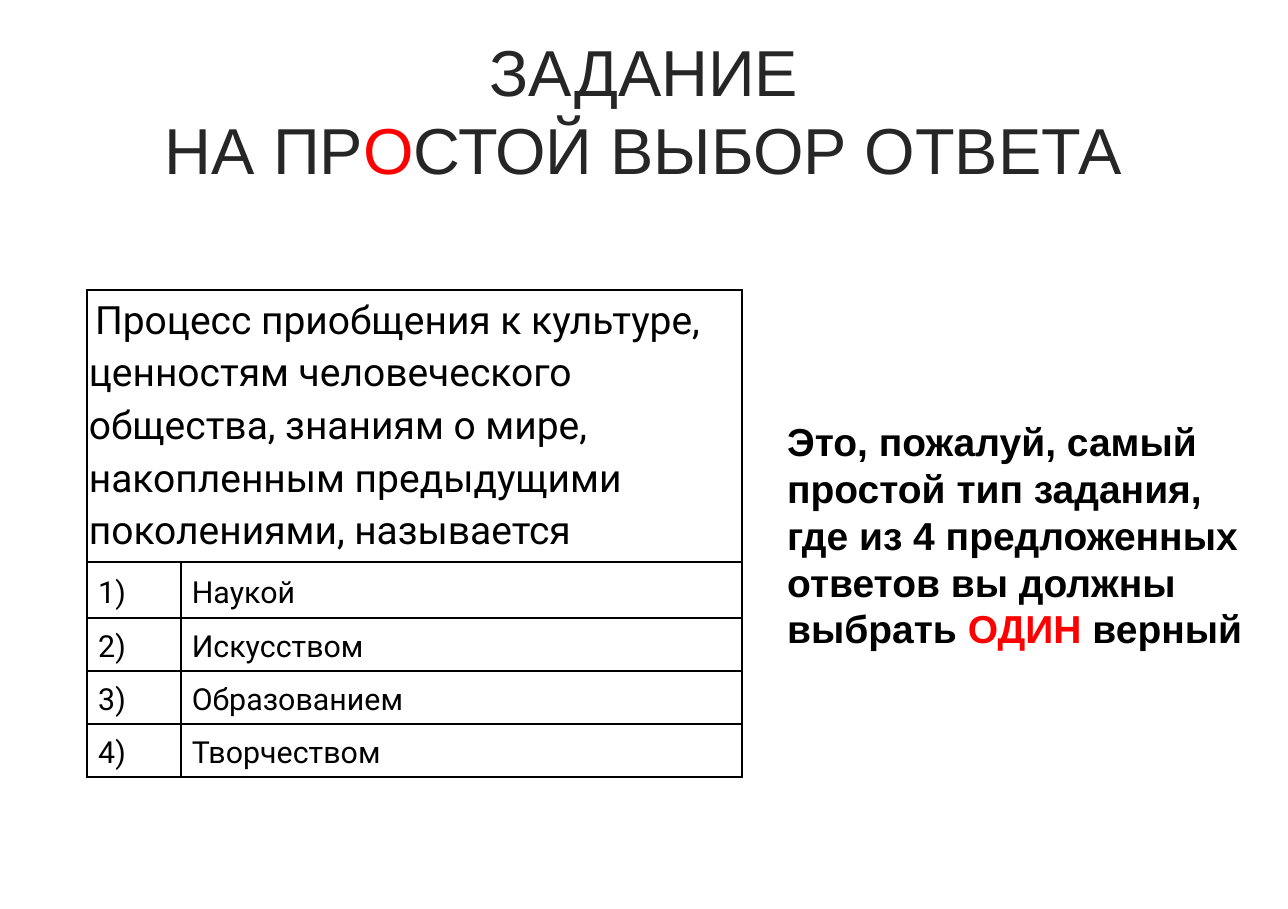
from dataclasses import dataclass

from lxml.etree import SubElement
from pptx import Presentation
from pptx.dml.color import RGBColor
from pptx.enum.text import MSO_ANCHOR, MSO_AUTO_SIZE, PP_ALIGN
from pptx.oxml.ns import qn
from pptx.util import Inches, Pt


@dataclass(frozen=True)
class Theme:
    ink: str = "000000"
    dark: str = "262626"
    red: str = "FF0000"
    head: int = 30
    body: int = 18
    answer: int = 14
    sans: str = "Arial"
    grid: str = "Roboto"


THEME = Theme()
QUESTION = ("Процесс приобщения к культуре, ценностям человеческого общества, "
            "знаниям о мире, накопленным предыдущими поколениями, называется")
ANSWERS = ["Наукой", "Искусством", "Образованием", "Творчеством"]


def write(frame, lines, size, font=THEME.sans, color=THEME.ink, bold=False,
          align=PP_ALIGN.LEFT, spacing=None, indent=None):
    """Fill a frame; each line is a list of runs, and odd runs are red."""
    frame.word_wrap = True
    for i, line in enumerate(lines):
        para = frame.paragraphs[0] if i == 0 else frame.add_paragraph()
        para.alignment = align
        para.line_spacing = spacing
        if indent is not None:
            props = para._p.get_or_add_pPr()
            props.set("marL", "0")
            props.set("indent", str(indent))
        for j, text in enumerate(line):
            run = para.add_run()
            run.text = text
            run.font.size = Pt(size)
            run.font.name = font
            run.font.bold = bold
            run.font.color.rgb = RGBColor.from_string(THEME.red if j % 2 else color)


def draw_title(slide, left, top, width, height):
    title = slide.shapes.title
    title.left, title.top, title.width, title.height = map(
        Inches, (left, top, width, height))
    frame = title.text_frame
    frame.auto_size = MSO_AUTO_SIZE.NONE
    frame.vertical_anchor = MSO_ANCHOR.TOP
    write(frame, [["ЗАДАНИЕ"], ["НА ПР", "О", "СТОЙ ВЫБОР ОТВЕТА"]],
          THEME.head, color=THEME.dark, align=PP_ALIGN.CENTER)


def draw_note(slide, left, top, width, height):
    box = slide.shapes.add_textbox(*map(Inches, (left, top, width, height)))
    write(box.text_frame,
          [["Это, пожалуй, самый простой тип задания,"],
           ["где из 4 предложенных ответов вы должны выбрать ", "ОДИН ", "верный"]],
          THEME.body, bold=True)


def style_cell(cell, inset):
    """Give a cell even margins, black borders and no fill."""
    cell.margin_left = cell.margin_right = Inches(inset)
    cell.margin_top = cell.margin_bottom = Inches(inset)
    props = cell._tc.get_or_add_tcPr()
    for side in ("lnL", "lnR", "lnT", "lnB"):
        line = SubElement(props, qn(f"a:{side}"), w=str(Pt(1)))
        fill = SubElement(line, qn("a:solidFill"))
        SubElement(fill, qn("a:srgbClr"), val=THEME.ink)
    cell.fill.background()


def draw_quiz(slide, left, top, width, height):
    """Question across the first row, numbered answers below."""
    count = len(ANSWERS)
    table = slide.shapes.add_table(
        count + 1, 2, *map(Inches, (left, top, width, height))).table
    table.first_row = table.horz_banding = False
    mark, first, step = 0.6, 0.36, 0.34
    ask = height - first - step * (count - 1)
    for col, size in zip(table.columns, (mark, width - mark)):
        col.width = Inches(size)
    for row, size in zip(table.rows, [ask, first] + [step] * (count - 1)):
        row.height = Inches(size)

    look = dict(font=THEME.grid, spacing=1.15, indent=Inches(0.04))
    for col in range(2):
        style_cell(table.cell(0, col), 0.01)
    table.cell(0, 0).merge(table.cell(0, 1))
    write(table.cell(0, 0).text_frame, [[QUESTION]], THEME.body, **look)
    for i, answer in enumerate(ANSWERS, 1):
        for col, text in enumerate((f"{i})", answer)):
            cell = table.cell(i, col)
            style_cell(cell, 0.03)
            cell.vertical_anchor = MSO_ANCHOR.MIDDLE
            write(cell.text_frame, [[text]], THEME.answer, **look)


def main():
    deck = Presentation()
    deck.slide_width, deck.slide_height = Inches(8.26), Inches(5.83)
    slide = deck.slides.add_slide(deck.slide_layouts.get_by_name("Title Only"))
    draw_title(slide, 0, 0.15, 8.26, 1.11)
    draw_note(slide, 4.95, 2.63, 3.14, 1.62)
    draw_quiz(slide, 0.56, 1.86, 4.2, 3.12)
    deck.save("out.pptx")


if __name__ == "__main__":
    main()
